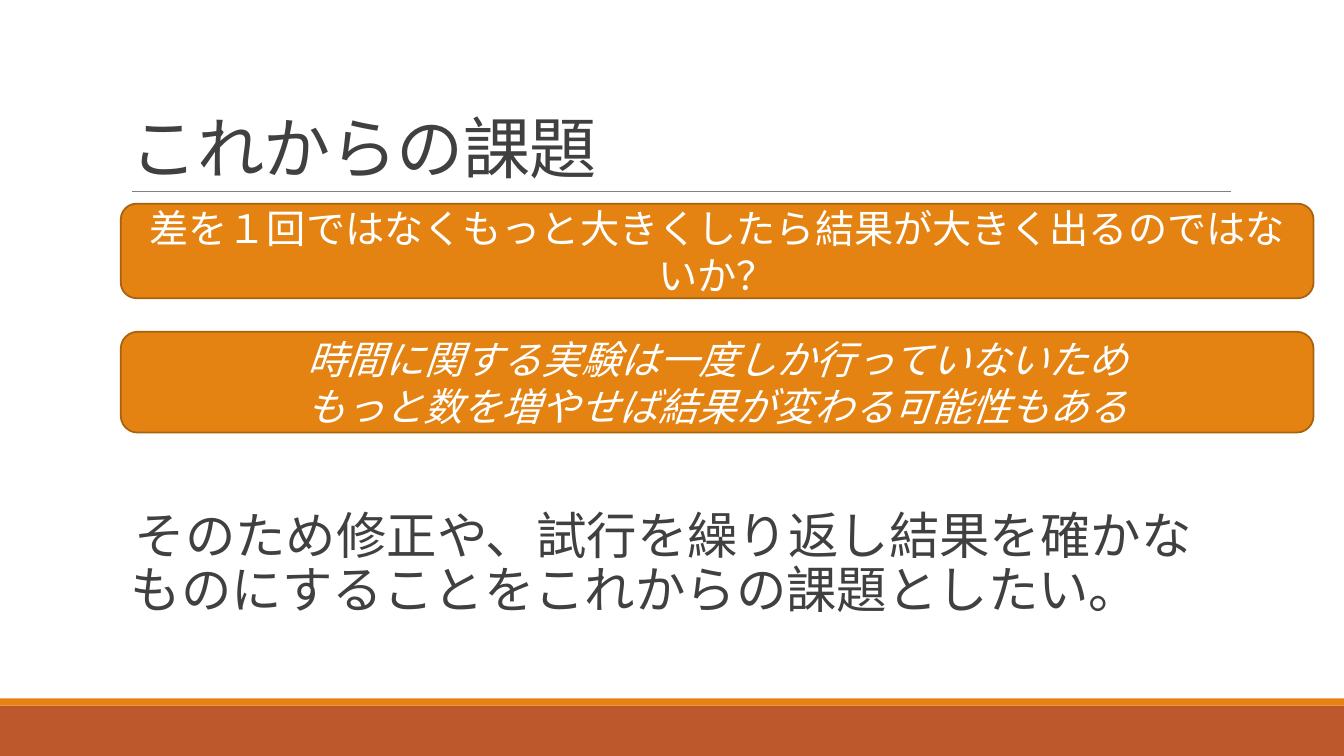
from lxml import etree
from pptx import Presentation
from pptx import util as u
from pptx.dml.color import RGBColor
from pptx.enum import shapes, text
from pptx.oxml.ns import qn

PX = 9525  # EMU per px, 96 px to the inch
FONT = "Calibri"
COLORS = {
    "orange": "E48312",
    "rust": "BD582C",
    "card_edge": "A9610D",
    "rule": "808080",
    "ink": "404040",
    "white": "FFFFFF",
}
LEFT = 115
TEXT_W = 1056
CARD_W = 1136
CONTENT_TOP = 194


def color(name):
    return RGBColor.from_string(COLORS[name])


def px(*lengths):
    return [n * PX for n in lengths]


def place(sp, *box):
    sp.left, sp.top, sp.width, sp.height = px(*box)


def style(p, size, ink, align, italic=None):
    p.alignment = align
    p.font.name = FONT
    p.font.size = u.Pt(size)
    p.font.italic = italic
    p.font.color.rgb = color(ink)


def add_block(slide, kind, box, fill):
    sp = slide.shapes.add_shape(kind, *px(*box))
    sp.shadow.inherit = False
    sp.fill.solid()
    sp.fill.fore_color.rgb = color(fill)
    sp.line.fill.background()
    return sp


def add_card(slide, top, height, lines, italic=None):
    sp = add_block(slide, shapes.MSO_SHAPE.ROUNDED_RECTANGLE,
                   (LEFT, top, CARD_W, height), "orange")
    sp.line.color.rgb = color("card_edge")
    sp.line.width = u.Pt(1.25)
    tf = sp.text_frame
    tf.word_wrap = True
    tf.vertical_anchor = text.MSO_ANCHOR.MIDDLE
    tf.text = "\n".join(lines)
    for p in tf.paragraphs:
        style(p, 28, "white", text.PP_ALIGN.CENTER, italic)


def add_rule(slide, left, right, y):
    line = slide.shapes.add_connector(
        shapes.MSO_CONNECTOR.STRAIGHT, *px(left, y, right, y))
    line.line.color.rgb = color("rule")
    line.line.width = u.Pt(0.5)
    etree.SubElement(line._element.spPr, qn("a:effectLst"))


def fill_placeholder(sp, box, words, size, spacing):
    """Place a template placeholder and set its one bottom-anchored paragraph."""
    place(sp, *box)
    tf = sp.text_frame
    tf.word_wrap = True
    tf.auto_size = text.MSO_AUTO_SIZE.NONE
    tf.vertical_anchor = text.MSO_ANCHOR.BOTTOM
    tf.text = words
    p = tf.paragraphs[0]
    p.line_spacing = spacing
    style(p, size, "ink", text.PP_ALIGN.LEFT)
    return tf


def set_blank_bullet(p):
    """Hang the first line on a space, so that it aligns with the next one."""
    pPr = p._p.get_or_add_pPr()
    pPr.set("marL", "91440")
    pPr.set("indent", "-91440")
    bullet = etree.Element(qn("a:buChar"), char=" ")
    pPr.insert_element_before(bullet, "a:tabLst", "a:defRPr", "a:extLst")


def add_title(slide, words):
    tf = fill_placeholder(slide.shapes.title, (LEFT, 30, TEXT_W, 153),
                          words, 48, 0.85)
    tf.paragraphs[0].runs[0]._r.get_or_add_rPr().set("spc", "-50")


def add_conclusion(slide, words):
    tf = fill_placeholder(slide.placeholders[1],
                          (LEFT, CONTENT_TOP, TEXT_W, 422), words, 36, 0.9)
    tf.margin_left = tf.margin_right = 0
    tf.margin_bottom = 26 * PX
    p = tf.paragraphs[0]
    p.space_before, p.space_after = u.Pt(12), u.Pt(2)
    set_blank_bullet(p)


def main():
    prs = Presentation()
    prs.slide_width, prs.slide_height = px(1280, 720)
    slide = prs.slides.add_slide(prs.slide_layouts[1])

    for top, height, fill in ((672, 48, "rust"), (665, 7, "orange")):
        add_block(slide, shapes.MSO_SHAPE.RECTANGLE,
                  (0, top, 1280, height), fill)
    add_rule(slide, 126, 1172, 182)

    add_title(slide, "これからの課題")
    add_conclusion(slide, "そのため修正や、試行を繰り返し結果を確かな"
                          "ものにすることをこれからの課題としたい。")
    add_card(slide, 316, 96, ["時間に関する実験は一度しか行っていないため",
                              "もっと数を増やせば結果が変わる可能性もある"],
             italic=True)
    add_card(slide, CONTENT_TOP, 90,
             ["差を１回ではなくもっと大きくしたら結果が大きく出るのではないか？"])

    prs.save("out.pptx")


if __name__ == "__main__":
    main()
